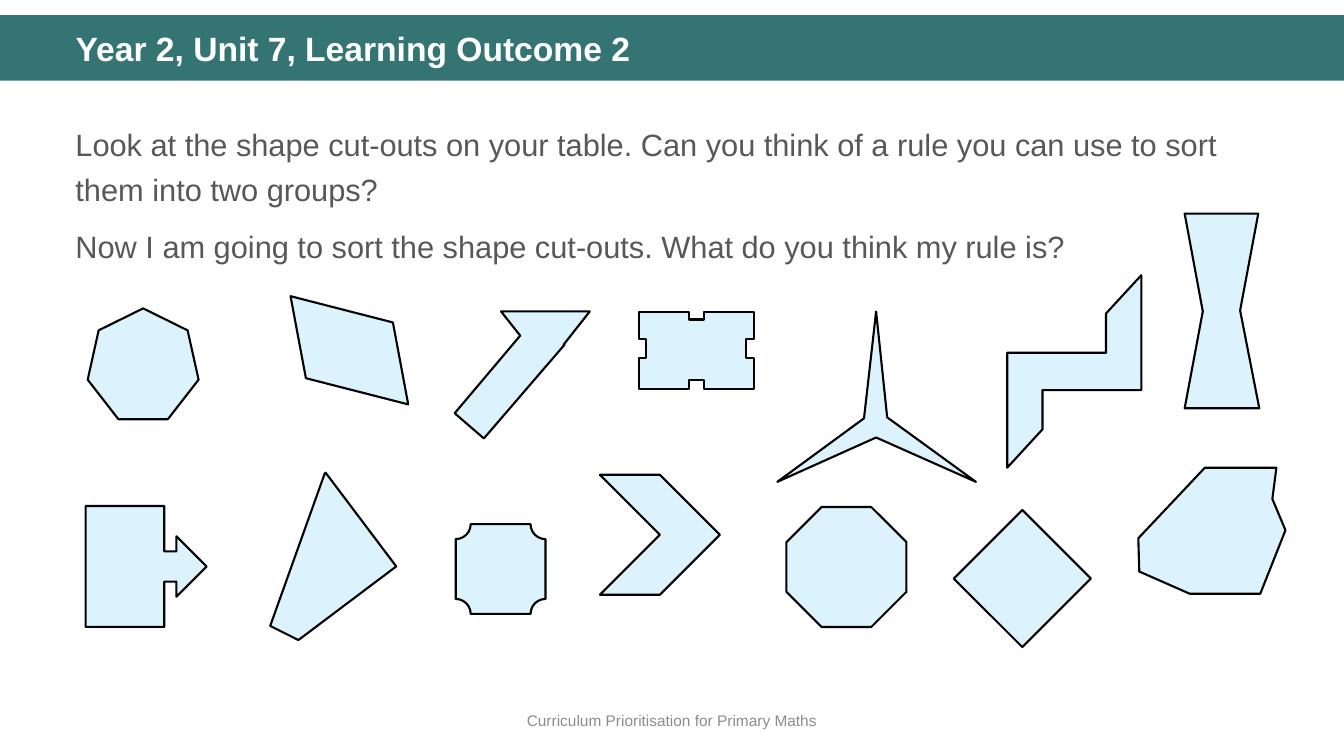
from pptx import Presentation, util as u
from pptx.dml.color import RGBColor
from pptx.enum import shapes, text

PX = 9144  # 100 px to the inch
COLOURS = {"band": "347574", "title": "FFFFFF", "body": "585858",
           "footer": "8C8C8C", "cutout": "DCF3FE", "outline": "000000"}
KIND = shapes.MSO_SHAPE


def write(box, lines, colour, font, layout):
    frame = box.text_frame
    frame.word_wrap = True
    frame.auto_size = text.MSO_AUTO_SIZE.NONE
    frame.text = "\n".join(lines)
    for para in frame.paragraphs:
        for name, value in layout.items():
            setattr(para, name, value)
        for name, value in {"name": "Arial", **font}.items():
            setattr(para.font, name, value)
        para.font.color.rgb = RGBColor.from_string(COLOURS[colour])
    frame.paragraphs[0].space_before = u.Pt(0)


def paint(shape, fill, outlined=True):
    shape.shadow.inherit = False
    shape.fill.solid()
    shape.fill.fore_color.rgb = RGBColor.from_string(COLOURS[fill])
    if outlined:
        shape.line.color.rgb = RGBColor.from_string(COLOURS["outline"])
        shape.line.width = u.Pt(1.5)
    else:
        shape.line.fill.background()


deck = Presentation()
deck.slide_width, deck.slide_height = 1333 * PX, 750 * PX
page = deck.slides.add_slide(deck.slide_layouts[5])

# Header band behind the title
title = page.shapes.title
band = page.shapes.add_shape(KIND.RECTANGLE, 0, 15 * PX, 1333 * PX, 65 * PX)
paint(band, "band", outlined=False)
title.element.addprevious(band.element)
for name, value in {"left": 65, "top": 27, "width": 1232, "height": 47}.items():
    setattr(title, name, value * PX)
title.text_frame.vertical_anchor = text.MSO_ANCHOR.TOP
write(title, ["Year 2, Unit 7, Learning Outcome 2"], "title",
      {"size": u.Pt(24), "bold": True},
      {"alignment": text.PP_ALIGN.LEFT, "line_spacing": 0.9})

# Questions
questions = page.shapes.add_textbox(65 * PX, 113 * PX, 1218 * PX, 76 * PX)
write(questions, [
    "Look at the shape cut-outs on your table. Can you think of a rule you can "
    "use to sort them into two groups?",
    "Now I am going to sort the shape cut-outs. What do you think my rule is?",
], "body", {"size": u.Pt(22)},
    {"line_spacing": 1.2, "space_before": u.Pt(4.5), "space_after": u.Pt(4.5)})

# Footer
footer = page.shapes.add_textbox(0, 695 * PX, 1333 * PX, 40 * PX)
footer.text_frame.vertical_anchor = text.MSO_ANCHOR.MIDDLE
write(footer, ["Curriculum Prioritisation for Primary Maths"], "footer",
      {"size": u.Pt(11)}, {"alignment": text.PP_ALIGN.CENTER})

# Cut-outs with a preset outline: kind, left, top, width, height
presets = [
    (KIND.HEPTAGON, 87, 306, 110, 110),
    (KIND.PARALLELOGRAM, 283, 300, 127, 95),
    (KIND.RIGHT_ARROW_CALLOUT, 85, 502, 120, 120),
    (KIND.PLAQUE, 452, 520, 89, 89),
    (KIND.CHEVRON, 595, 471, 119, 119),
    (KIND.OCTAGON, 780, 503, 119, 119),
    (KIND.DIAMOND, 946, 506, 136, 136),
]
for kind, *place in presets:
    cutout = page.shapes.add_shape(kind, *(value * PX for value in place))
    paint(cutout, "cutout")
    if kind == KIND.PARALLELOGRAM:
        cutout.adjustments[0] = 0.466
        cutout.rotation = 259.4

# Cut-outs with a free outline: corner points
star = [(968, 478), (869, 434), (771, 478), (857, 415), (869, 309), (880, 414)]
notched = [(634, 310), (683, 310), (683, 317), (698, 317), (698, 310),
           (748, 310), (748, 336), (740, 336), (740, 355), (748, 355),
           (748, 386), (698, 386), (698, 377), (683, 377), (683, 386),
           (634, 386), (634, 355), (641, 355), (641, 336), (634, 336)]
kite = [(323, 469), (393, 562), (296, 635), (268, 621), (322, 470)]
hourglass = [(1175, 212), (1248, 212), (1230, 308), (1249, 405), (1175, 405),
             (1193, 309)]
irregular = [(1225, 464), (1266, 464), (1262, 495), (1275, 526), (1250, 589),
             (1180, 589), (1130, 567), (1129, 534), (1195, 464)]
zigzag = [(1132, 273), (1132, 387), (1034, 387), (1034, 426), (999, 464),
          (999, 350), (1097, 350), (1097, 311)]
bent_arrow = [(497, 309), (585, 309), (559, 342), (560, 342), (480, 435),
              (451, 410), (516, 333)]
for start, *corners in (star, notched, kite, hourglass, irregular, zigzag,
                        bent_arrow):
    builder = page.shapes.build_freeform(*start, scale=PX)
    builder.add_line_segments(corners, close=True)
    paint(builder.convert_to_shape(), "cutout")

deck.save("out.pptx")
